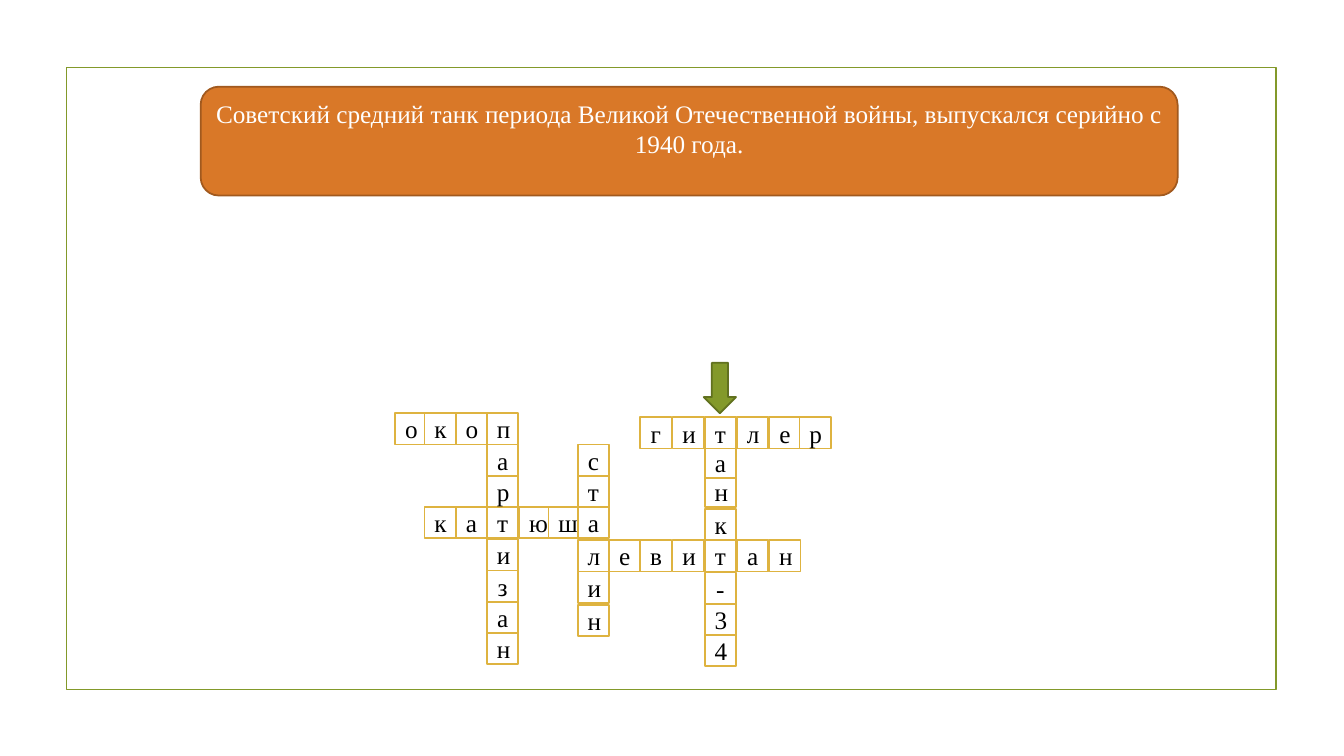
from pptx import Presentation
from pptx.dml.color import RGBColor
from pptx.enum.shapes import MSO_SHAPE as SHAPE
from pptx.enum.text import MSO_ANCHOR as ANCHOR, PP_ALIGN as ALIGN
from pptx.util import Emu, Pt

PX = 9144
CELL = 31
FONT = "Times New Roman"
COLORS = {
    "white": "FFFFFF",
    "black": "000000",
    "green": "83992A",
    "dark_green": "61711F",
    "gold": "DEB340",
    "orange": "D97828",
    "brown": "A1591E",
}
COLUMNS = [392, 421, 452, 483, 515, 544, 573, 604, 635, 667, 699, 731, 763, 793]
ACROSS = [
    ("око", 0, 410),
    ("ка юш", 1, 503),
    ("ги лер", 8, 414),
    ("еви ан", 7, 536),
]
DOWN = [
    ("партизан", 3, [410, 441, 472, 503, 535, 566, 597, 628]),
    ("сталин", 6, [441, 472, 503, 536, 567, 600]),
    ("танкт-34", 10, [414, 443, 472, 505, 536, 568, 599, 630]),
]
QUESTION = (
    "Советский средний танк периода Великой Отечественной войны, "
    "выпускался серийно с 1940 года."
)


def px(n):
    """Turn px into EMU."""
    return Emu(n * PX)


def rgb(name):
    """Look up a named colour."""
    return RGBColor.from_string(COLORS[name])


def add_box(s, kind, x, y, w, h, line, fill=None):
    """Add an outlined preset shape."""
    sp = s.shapes.add_shape(kind, px(x), px(y), px(w), px(h))
    sp.shadow.inherit = False
    sp.line.color.rgb = rgb(line)
    sp.line.width = Pt(1.25)
    if fill:
        sp.fill.solid()
        sp.fill.fore_color.rgb = rgb(fill)
    else:
        sp.fill.background()
    return sp


def set_text(sp, text, color="black", size=18, anchor=ANCHOR.MIDDLE):
    """Write centred text into a shape."""
    tf = sp.text_frame
    tf.word_wrap = True
    tf.vertical_anchor = anchor
    p = tf.paragraphs[0]
    p.alignment = ALIGN.CENTER
    r = p.add_run()
    r.text = text
    r.font.name = FONT
    r.font.size = Pt(size)
    r.font.color.rgb = rgb(color)


def add_letter(s, letter, x, y):
    """Add one crossword cell."""
    sp = add_box(s, SHAPE.RECTANGLE, x, y, CELL, CELL, "gold", "white")
    set_text(sp, letter)


def add_crossword(s):
    """Lay out the crossing words, each shared letter in its down word."""
    for word, first, y in ACROSS:
        for letter, x in zip(word, COLUMNS[first:]):
            if letter != " ":
                add_letter(s, letter, x, y)
    for word, column, tops in DOWN:
        for letter, y in reversed(list(zip(word, tops))):
            add_letter(s, letter, COLUMNS[column], y)


def add_question(s):
    """Add the question banner."""
    sp = add_box(s, SHAPE.ROUNDED_RECTANGLE, 199, 86, 969, 108, "brown", "orange")
    set_text(sp, QUESTION, color="white", anchor=ANCHOR.TOP)
    sp.text_frame.margin_top = px(6)


def add_pointer(s):
    """Add the arrow that points down at the current word."""
    sp = add_box(s, SHAPE.RIGHT_ARROW, 689, 369, 50, 32, "dark_green", "green")
    sp.rotation = 90


def main():
    """Build and save the slide."""
    prs = Presentation()
    prs.slide_width, prs.slide_height = px(1333), px(750)
    s = prs.slides.add_slide(prs.slide_layouts[6])
    add_box(s, SHAPE.RECTANGLE, 66, 67, 1200, 617, "green")
    add_question(s)
    add_crossword(s)
    add_pointer(s)
    prs.save("out.pptx")


if __name__ == "__main__":
    main()
